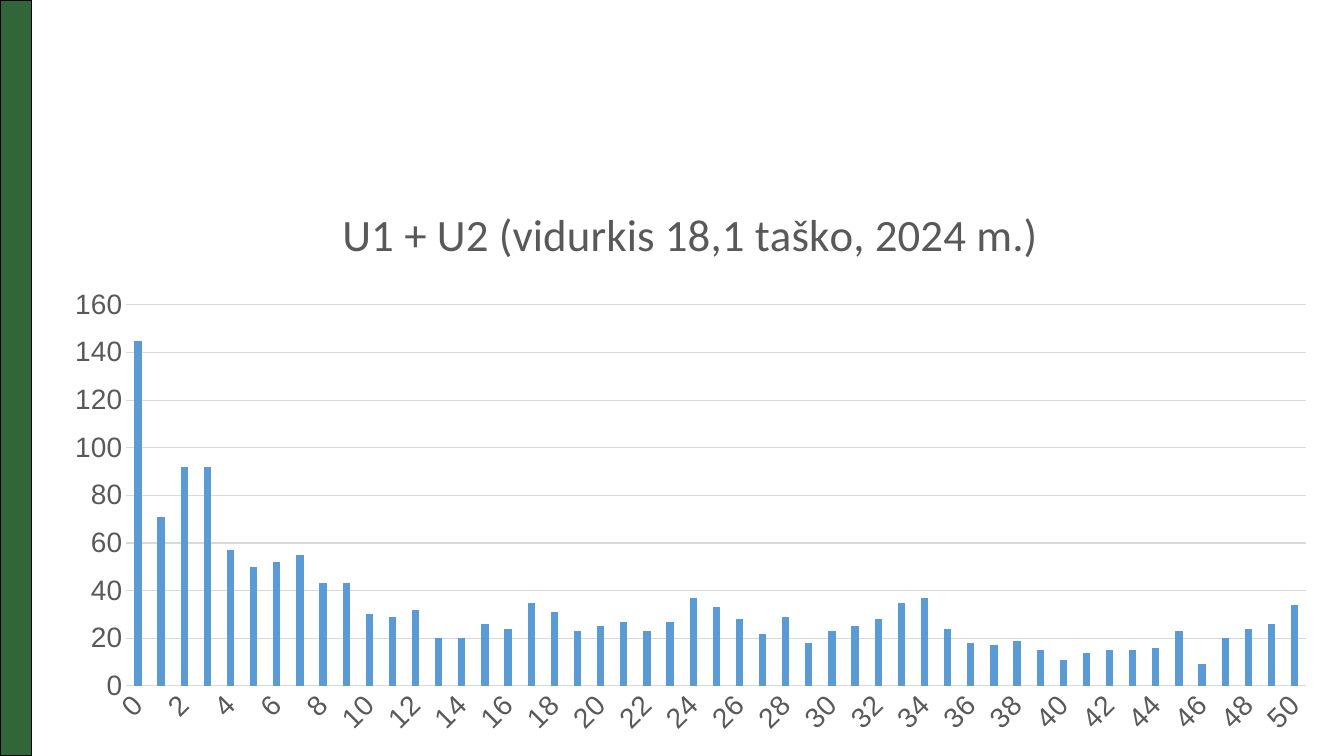
import pptx
import pptx.chart.data
import pptx.dml.color
import pptx.enum.chart
import pptx.oxml
import pptx.oxml.ns
import pptx.util
from pptx.util import Inches

GREEN = pptx.dml.color.RGBColor(0x31, 0x67, 0x38)
BLUE = pptx.dml.color.RGBColor(0x5B, 0x9B, 0xD5)
GREY = pptx.dml.color.RGBColor(0x59, 0x59, 0x59)
LIGHT_GREY = pptx.dml.color.RGBColor(0xD9, 0xD9, 0xD9)
BLACK = pptx.dml.color.RGBColor(0, 0, 0)

COUNTS = [
    145, 71, 92, 92, 57, 50, 52, 55, 43, 43,
    30, 29, 32, 20, 20, 26, 24, 35, 31, 23,
    25, 27, 23, 27, 37, 33, 28, 22, 29, 18,
    23, 25, 28, 35, 37, 24, 18, 17, 19, 15,
    11, 14, 15, 15, 16, 23, 9, 20, 24, 26, 34,
]


def style_font(font, name, size, color):
    font.name = name
    font.size = pptx.util.Pt(size)
    font.bold = False
    font.color.rgb = color


deck = pptx.Presentation()
deck.slide_width = Inches(13.33)
deck.slide_height = Inches(7.5)
page = deck.slides.add_slide(deck.slide_layouts[6])

strip = page.shapes.add_table(1, 1, 0, 0, Inches(0.31), Inches(7.5)).table
strip.first_row = False
strip.horz_banding = False
strip_cell = strip.cell(0, 0)
strip_cell.fill.solid()
strip_cell.fill.fore_color.rgb = GREEN
cell_properties = strip_cell._tc.get_or_add_tcPr()
for position, side in enumerate(("lnL", "lnR", "lnT", "lnB")):
    border = pptx.oxml.parse_xml(
        f'<a:{side} {pptx.oxml.ns.nsdecls("a")} w="12700">'
        f'<a:solidFill><a:srgbClr val="{BLACK}"/></a:solidFill></a:{side}>'
    )
    cell_properties.insert(position, border)

scores = pptx.chart.data.CategoryChartData()
scores.categories = [str(score) for score in range(len(COUNTS))]
scores.add_series("Series 1", COUNTS)
chart = page.shapes.add_chart(
    pptx.enum.chart.XL_CHART_TYPE.COLUMN_CLUSTERED,
    Inches(0.49), Inches(1.77), Inches(12.72), Inches(5.63), scores,
).chart
style_font(chart.font, "Arial", 10, BLACK)
chart.has_legend = False

chart.has_title = True
chart.chart_title.include_in_layout = False
title_para = chart.chart_title.text_frame.paragraphs[0]
title_para.text = "U1 + U2 (vidurkis 18,1 taško, 2024 m.)"
style_font(title_para.font, "Calibri", 32, GREY)

plot = chart.plots[0]
plot.gap_width = 219
plot.vary_by_categories = False
columns = plot.series[0]
columns.invert_if_negative = False
columns.format.fill.solid()
columns.format.fill.fore_color.rgb = BLUE

score_axis = chart.category_axis
count_axis = chart.value_axis
for axis in (score_axis, count_axis):
    axis.major_tick_mark = pptx.enum.chart.XL_TICK_MARK.NONE
    axis.minor_tick_mark = pptx.enum.chart.XL_TICK_MARK.NONE
    style_font(axis.tick_labels.font, "Arial", 20, GREY)

count_axis.minimum_scale = 0
count_axis.maximum_scale = 160
count_axis.major_unit = 20
count_axis.format.line.fill.background()
count_axis.has_major_gridlines = True
for line in (score_axis.format.line, count_axis.major_gridlines.format.line):
    line.color.rgb = LIGHT_GREY
    line.width = pptx.util.Pt(0.75)

score_axis_xml = score_axis._element
score_axis_xml.find(".//" + pptx.oxml.ns.qn("a:bodyPr")).set("rot", "-2700000")
label_step = pptx.oxml.parse_xml(
    f'<c:tickLblSkip {pptx.oxml.ns.nsdecls("c")} val="2"/>'
)
score_axis_xml.find(pptx.oxml.ns.qn("c:noMultiLvlLbl")).addprevious(label_step)

deck.save("out.pptx")
